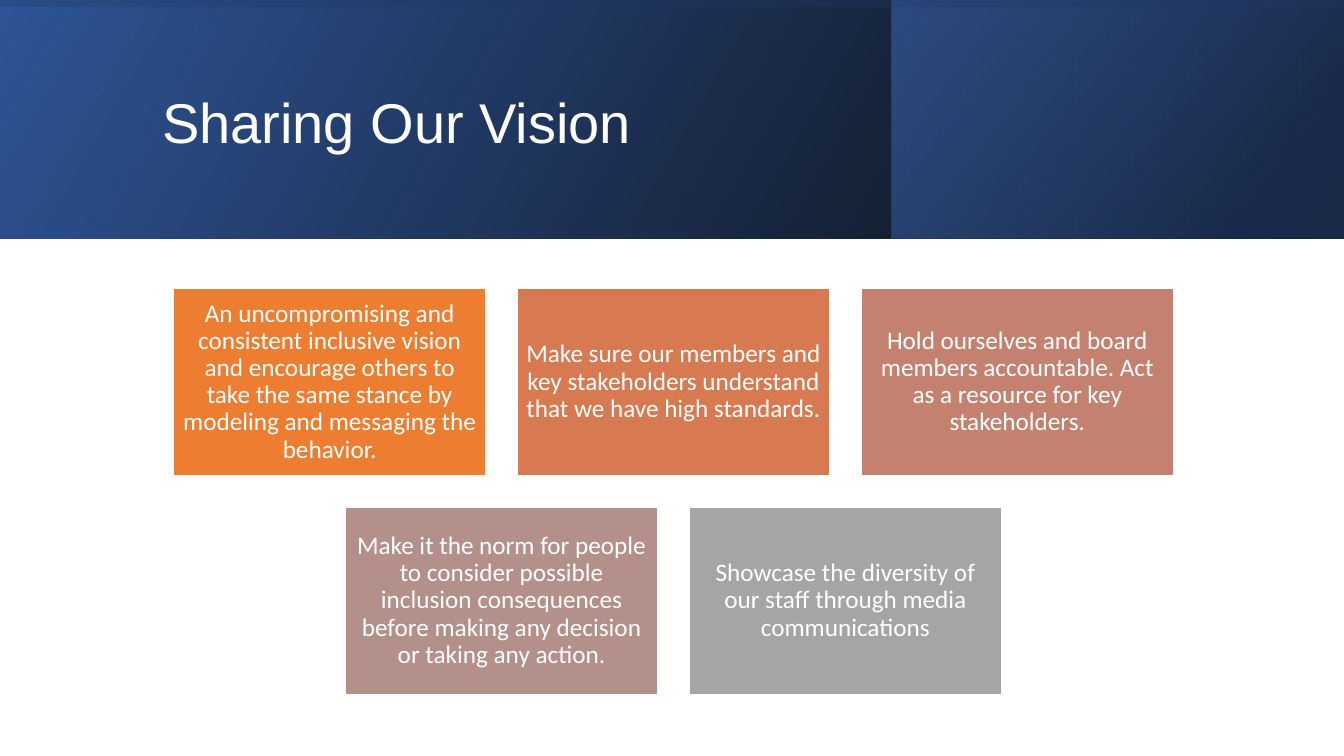
from lxml import etree
from pptx import Presentation
from pptx import util as u
from pptx.dml.color import RGBColor
from pptx.enum import shapes, text
from pptx.oxml.ns import qn

SLIDE_W, SLIDE_H = 13.33, 7.5
BANNER_H = 2.37
PANEL_LEFT = 8.84
CARD_W, CARD_H = 3.1, 1.86
COLUMN_PITCH, ROW_PITCH = 3.41, 2.17
GRID_CENTER, GRID_TOP = 6.68, 2.86

WHITE = RGBColor(0xFF, 0xFF, 0xFF)
BLACK = RGBColor(0x00, 0x00, 0x00)
BLUE = RGBColor(0x2F, 0x55, 0x97)
NAVY = RGBColor(0x20, 0x38, 0x64)
BRIGHT_BLUE = RGBColor(0x44, 0x72, 0xC4)
ORANGE = RGBColor(0xED, 0x7D, 0x31)
COPPER = RGBColor(0xD8, 0x7A, 0x51)
CLAY = RGBColor(0xC4, 0x81, 0x70)
ROSE = RGBColor(0xB4, 0x90, 0x8B)
GRAY = RGBColor(0xA5, 0xA5, 0xA5)

CARD_ROWS = [
    [
        ("An uncompromising and consistent inclusive vision and encourage "
         "others to take the same stance by modeling and messaging the "
         "behavior.", ORANGE),
        ("Make sure our members and key stakeholders understand that we "
         "have high standards.", COPPER),
        ("Hold ourselves and board members accountable. Act as a resource "
         "for key stakeholders.", CLAY),
    ],
    [
        ("Make it the norm for people to consider possible inclusion "
         "consequences before making any decision or taking any action.",
         ROSE),
        ("Showcase the diversity of our staff through media communications",
         GRAY),
    ],
]


def write(frame, words, size, font, align, inset):
    frame.word_wrap = True
    frame.vertical_anchor = text.MSO_ANCHOR.MIDDLE
    frame.margin_left = frame.margin_right = u.Inches(inset)
    frame.margin_top = frame.margin_bottom = u.Inches(0.07)
    paragraph = frame.paragraphs[0]
    paragraph.alignment = align
    paragraph.line_spacing = 0.9
    run = paragraph.add_run()
    run.text = words
    run.font.size = u.Pt(size)
    run.font.name = font
    run.font.color.rgb = WHITE


def add_block(slide, left, top, width, height):
    block = slide.shapes.add_shape(
        shapes.MSO_SHAPE.RECTANGLE,
        u.Inches(left), u.Inches(top), u.Inches(width), u.Inches(height))
    block.shadow.inherit = False
    block.line.fill.background()
    return block


def set_opacity(block, percents):
    """Give each colour of the block's fill its opacity, in order."""
    colors = block.fill._xPr.iterfind(".//" + qn("a:srgbClr"))
    for color, percent in zip(colors, percents):
        alpha = etree.SubElement(color, qn("a:alpha"))
        alpha.set("val", str(percent * 1000))


def add_gradient(slide, left, width, angle, stops):
    """Each stop is (position, colour, opacity percent)."""
    block = add_block(slide, left, 0, width, BANNER_H)
    block.fill.gradient()
    block.fill.gradient_angle = angle
    for stop, (position, color, _) in zip(block.fill.gradient_stops, stops):
        stop.position = position
        stop.color.rgb = color
    set_opacity(block, [opacity for _, _, opacity in stops])


def add_banner(slide):
    add_gradient(slide, 0, SLIDE_W, 330, [(0, BLUE, 100), (1, BLACK, 96)])
    add_gradient(slide, PANEL_LEFT, SLIDE_W - PANEL_LEFT, 320,
                 [(0, BRIGHT_BLUE, 48), (0.81, NAVY, 68)])
    top_edge = add_block(slide, 0, 0, SLIDE_W, 0.07)
    top_edge.fill.solid()
    top_edge.fill.fore_color.rgb = NAVY
    set_opacity(top_edge, [30])


def add_title(slide, words):
    title = slide.shapes.add_textbox(
        u.Inches(1.51), u.Inches(0.38), u.Inches(10.63), u.Inches(1.72))
    write(title.text_frame, words, size=40, font="Arial",
          align=text.PP_ALIGN.LEFT, inset=0.1)


def add_card(slide, left, top, words, color):
    card = add_block(slide, left, top, CARD_W, CARD_H)
    card.fill.solid()
    card.fill.fore_color.rgb = color
    card.line.color.rgb = WHITE
    card.line.width = u.Pt(1)
    write(card.text_frame, words, size=18, font="Calibri",
          align=text.PP_ALIGN.CENTER, inset=0.07)


def add_cards(slide):
    """Centre each row of cards on the grid's middle line."""
    for row, cards in enumerate(CARD_ROWS):
        row_width = CARD_W + (len(cards) - 1) * COLUMN_PITCH
        row_left = GRID_CENTER - row_width / 2
        for column, (words, color) in enumerate(cards):
            add_card(slide, row_left + column * COLUMN_PITCH,
                     GRID_TOP + row * ROW_PITCH, words, color)


def main():
    deck = Presentation()
    deck.slide_width = u.Inches(SLIDE_W)
    deck.slide_height = u.Inches(SLIDE_H)
    slide = deck.slides.add_slide(deck.slide_layouts[6])
    add_banner(slide)
    add_title(slide, "Sharing Our Vision")
    add_cards(slide)
    deck.save("out.pptx")


if __name__ == "__main__":
    main()
